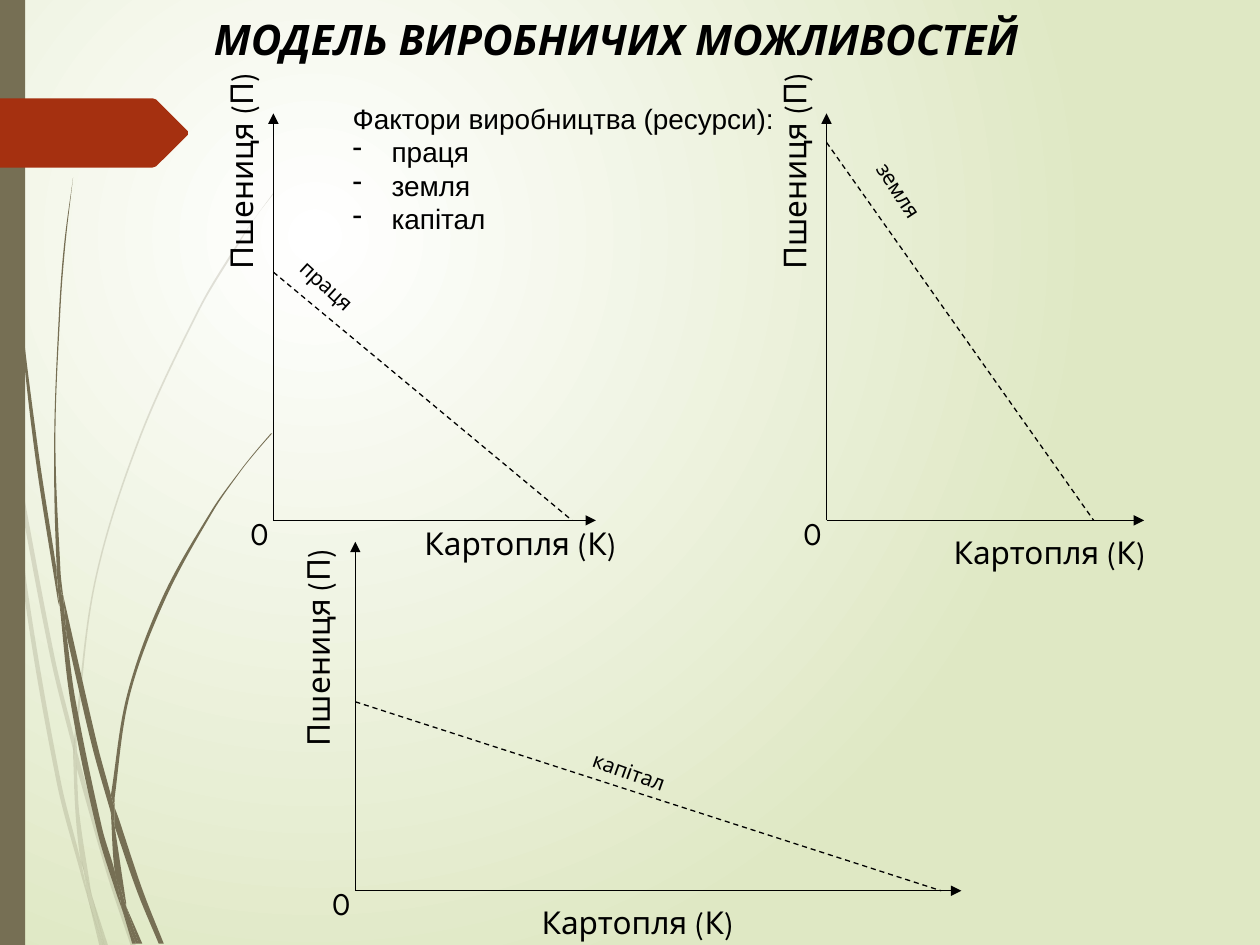
from dataclasses import dataclass
from math import dist

from lxml import etree
from pptx import Presentation
from pptx import util as u
from pptx.dml.color import RGBColor
from pptx.enum import dml, shapes, text
from pptx.oxml.ns import qn

PX = 9144  # one px is a hundredth of an inch
WIDTH, HEIGHT = 1000, 750


@dataclass(frozen=True)
class Theme:
    ink: str = "000000"
    stalk: str = "766F54"
    accent: str = "A53010"
    glow: str = "FFFFFF"
    meadow: str = "DFE8C4"
    font: str = "League Spartan"
    list_font: str = "Arial"
    title: int = 24
    axis: int = 18
    body: int = 16
    curve: int = 12
    line: float = 0.75


THEME = Theme()

TITLE = "МОДЕЛЬ ВИРОБНИЧИХ МОЖЛИВОСТЕЙ"
FACTORS_HEADING = "Фактори виробництва (ресурси):"
FACTORS = ["праця", "земля", "капітал"]
Y_LABEL, X_LABEL, ORIGIN_LABEL = "Пшениця (П)", "Картопля (К)", "0"

# origin, axis ends, curve ends on the axes; boxes are left, top, width, height
GRAPHS = [
    dict(origin=(217, 413), top=90, right=473, curve=(216, 454), y_box=(171, 29),
         x_box=(327, 411, 242), name=FACTORS[0], name_box=(220, 224, 106, 30), angle=42.63),
    dict(origin=(656, 413), top=90, right=908, curve=(113, 868), y_box=(610, 29),
         x_box=(747, 418, 184), name=FACTORS[1], name_box=(624, 238, 312, 30), angle=56.9),
    dict(origin=(282, 707), top=430, right=763, curve=(557, 747), y_box=(232, 407),
         x_box=(420, 712, 242), name=FACTORS[2], name_box=(457, 613, 172, 30), angle=19.7),
]

# Each blade of grass is a pair of edges: one going out, one coming back
PALE_BLADES = [
    ([(8, 350), (6, 322), (0, 282)], [(0, 299), (7, 344)]),
    ([(12, 376), (40, 522), (59, 599)], [(59, 586), (43, 520), (10, 345)]),
    ([(61, 610), (85, 694), (104, 751)], [(108, 751), (88, 692), (64, 607), (61, 596)]),
    ([(73, 711), (83, 751)], [(86, 751), (73, 711)]),
    ([(8, 350), (19, 470), (45, 621), (64, 693), (70, 714)],
     [(69, 707), (64, 683), (48, 619), (22, 469), (12, 376)]),
    ([(58, 599), (60, 646), (64, 683), (67, 692), (73, 711)],
     [(72, 706), (63, 646), (61, 610), (61, 608)]),
    ([(59, 586), (59, 584), (75, 461), (110, 348), (158, 244), (186, 197), (201, 175), (217, 153)],
     [(217, 154), (201, 175), (187, 198), (159, 245), (111, 349), (76, 462), (61, 584), (61, 596)]),
    ([(70, 714), (79, 751)], [(82, 751), (70, 714)]),
    ([(58, 599), (61, 608), (61, 610)], [(61, 596), (59, 586)]),
    ([(65, 683), (69, 707), (70, 714), (82, 751)], [(83, 751), (73, 711), (67, 692)]),
]
DARK_BLADES = [
    ([(2, 0), (3, 48), (5, 110), (14, 233), (27, 355), (46, 477), (47, 481)],
     [(45, 457), (45, 453), (30, 355), (15, 232), (6, 109), (4, 48), (3, 0)]),
    ([(53, 505), (73, 592), (88, 645)], [(88, 633), (88, 631), (77, 590), (50, 472)]),
    ([(91, 656), (109, 708), (126, 749)], [(130, 749), (113, 706), (94, 649), (91, 641)]),
    ([(47, 477), (56, 557), (77, 659), (92, 708), (97, 722)],
     [(96, 717), (91, 691), (81, 657), (60, 556), (53, 505)]),
    ([(49, 472), (45, 449), (43, 349), (47, 245), (51, 193), (58, 141)],
     [(58, 141), (52, 193), (48, 245), (44, 349), (48, 453), (50, 472)]),
    ([(100, 719), (110, 749)], [(113, 749), (100, 719)]),
    ([(45, 453), (47, 477), (53, 505)], [(50, 472), (49, 472), (45, 449)]),
    ([(88, 631), (101, 551), (129, 474), (168, 405), (191, 373), (203, 358), (215, 344)],
     [(216, 344), (203, 359), (191, 374), (169, 406), (131, 476), (103, 552), (91, 633), (91, 641)]),
    ([(97, 722), (105, 749)], [(108, 749), (97, 722)]),
    ([(88, 645), (91, 691), (96, 706), (100, 719)], [(100, 716), (91, 656), (90, 651)]),
    ([(88, 631), (88, 645), (90, 651), (91, 656)], [(91, 641), (88, 631)]),
    ([(91, 691), (96, 717), (97, 722), (108, 749)], [(110, 749), (100, 719), (96, 706)]),
]
RIBBON = [(0, 78), (121, 78), (124, 79), (149, 104), (149, 107), (124, 132), (121, 133), (0, 133)]


def px(*lengths):
    return [u.Emu(round(length * PX)) for length in lengths]


def rgb(name):
    return RGBColor.from_string(name)


def paint(shape, color, opacity=100):
    shape.shadow.inherit = False
    shape.fill.solid()
    shape.fill.fore_color.rgb = rgb(color)
    shape.line.fill.background()
    if opacity < 100:
        fill_color = shape.fill._xPr.find(".//" + qn("a:srgbClr"))
        etree.SubElement(fill_color, qn("a:alpha"), val=str(opacity * 1000))


def add_outline(slide, points, color, opacity=100):
    builder = slide.shapes.build_freeform(*px(*points[0]))
    builder.add_line_segments([px(*point) for point in points[1:]], close=True)
    shape = builder.convert_to_shape()
    paint(shape, color, opacity)
    return shape


def handles(edge):
    """Give the two Bezier handles of each stretch of an edge."""
    padded = [edge[0], *edge, edge[-1]]
    for a, b, c, d in zip(padded, padded[1:], padded[2:], padded[3:]):
        reach = dist(b, c) / 3
        yield (tuple(q + (r - p) * reach / dist(a, c) for p, q, r in zip(a, b, c)),
               tuple(r - (s - q) * reach / dist(b, d) for q, r, s in zip(b, c, d)))


def add_blade(slide, outward, back, opacity):
    shape = add_outline(slide, outward + back, THEME.stalk, opacity)
    stretches = [*handles(outward), None, *handles(back)]
    lines = shape._element.findall(".//" + qn("a:lnTo"))
    for line, stretch in zip(lines, stretches):
        if stretch is None:
            continue
        bezier = etree.Element(qn("a:cubicBezTo"))
        for handle in stretch:
            x, y = px(*handle)
            etree.SubElement(bezier, qn("a:pt"), x=str(x - shape.left), y=str(y - shape.top))
        bezier.append(line[0])
        line.getparent().replace(line, bezier)


def add_line(slide, start, end, arrow=False, dashed=False):
    connector = slide.shapes.add_connector(shapes.MSO_CONNECTOR.STRAIGHT, *px(*start, *end))
    connector.line.color.rgb = rgb(THEME.ink)
    connector.line.width = u.Pt(THEME.line)
    if dashed:
        connector.line.dash_style = dml.MSO_LINE.DASH
    if arrow:
        etree.SubElement(connector.line._get_or_add_ln(), qn("a:tailEnd"), type="triangle")
    etree.SubElement(connector._element.spPr, qn("a:effectLst"))


def add_run(paragraph, content, size, font=THEME.font, strong=False):
    run = paragraph.add_run()
    run.text = content
    run.font.size, run.font.name = u.Pt(size), font
    run.font.bold = run.font.italic = strong
    run.font.color.rgb = rgb(THEME.ink)


def add_frame(slide, box, angle=0, upward=False):
    shape = slide.shapes.add_textbox(*px(*box))
    shape.rotation = angle
    frame = shape.text_frame
    frame.word_wrap = True
    if upward:
        frame._txBody.bodyPr.set("vert", "vert270")
    return frame


def add_label(slide, box, content, size, **turn):
    add_run(add_frame(slide, box, **turn).paragraphs[0], content, size)


def add_background(slide):
    fill = slide.background.fill
    fill.gradient()
    for stop, color in zip(fill.gradient_stops, (THEME.glow, THEME.meadow)):
        stop.color.rgb = rgb(color)
    linear = slide._element.find(".//" + qn("a:lin"))
    radial = etree.Element(qn("a:path"), path="circle")
    etree.SubElement(radial, qn("a:fillToRect"), l="50000", t="50000", r="100000", b="100000")
    linear.getparent().replace(linear, radial)


def add_decoration(slide):
    for blades, opacity in ((PALE_BLADES, 20), (DARK_BLADES, 100)):
        for outward, back in blades:
            add_blade(slide, outward, back, opacity)
    band = slide.shapes.add_shape(shapes.MSO_SHAPE.RECTANGLE, *px(0, 0, 20, HEIGHT))
    paint(band, THEME.stalk)
    add_outline(slide, RIBBON, THEME.accent)


def add_graph(slide, graph):
    x, y = graph["origin"]
    curve_top, curve_right = graph["curve"]
    add_line(slide, (x, y), (x, graph["top"]), arrow=True)
    add_line(slide, (x, y), (graph["right"], y), arrow=True)
    add_line(slide, (x, curve_top), (curve_right, y), dashed=True)
    add_label(slide, (*graph["y_box"], 50, 195), Y_LABEL, THEME.axis, upward=True)
    add_label(slide, (*graph["x_box"], 40), X_LABEL, THEME.axis)
    add_label(slide, graph["name_box"], graph["name"], THEME.curve, angle=graph["angle"])
    add_label(slide, (x - 28, y - 10, 31, 40), ORIGIN_LABEL, THEME.axis)


def add_factors(slide):
    frame = add_frame(slide, (270, 36, 371, 195))
    frame.vertical_anchor = text.MSO_ANCHOR.MIDDLE
    add_run(frame.paragraphs[0], FACTORS_HEADING, THEME.body, THEME.list_font)
    for factor in FACTORS:
        paragraph = frame.add_paragraph()
        properties = paragraph._p.get_or_add_pPr()
        properties.set("marL", str(31 * PX))
        properties.set("indent", str(-31 * PX))
        etree.SubElement(properties, qn("a:buFontTx"))
        etree.SubElement(properties, qn("a:buChar"), char="-")
        add_run(paragraph, factor, THEME.body, THEME.list_font)


def add_title(slide):
    paragraph = add_frame(slide, (33, 6, 900, 55)).paragraphs[0]
    paragraph.alignment = text.PP_ALIGN.CENTER
    paragraph._p.get_or_add_pPr().set("marL", str(12 * PX))
    add_run(paragraph, TITLE, THEME.title, strong=True)


def main():
    presentation = Presentation()
    presentation.slide_width, presentation.slide_height = px(WIDTH, HEIGHT)
    slide = presentation.slides.add_slide(presentation.slide_layouts[6])
    add_background(slide)
    add_decoration(slide)
    for graph in GRAPHS:
        add_graph(slide, graph)
    add_factors(slide)
    add_title(slide)
    presentation.save("out.pptx")


if __name__ == "__main__":
    main()
